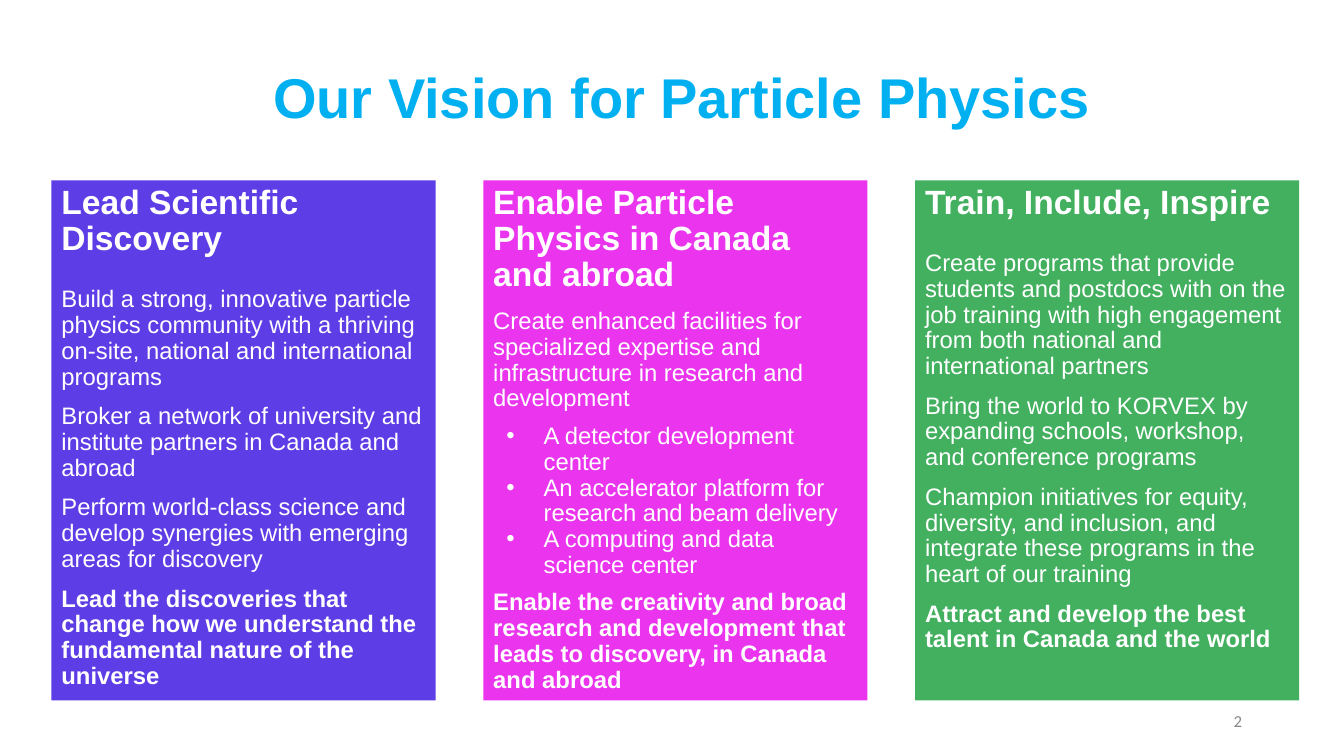
"""Build the vision slide: a title over three coloured cards of goals."""
from dataclasses import dataclass

from lxml import etree
from pptx import Presentation
from pptx.dml.color import RGBColor
from pptx.enum.shapes import MSO_SHAPE
from pptx.enum.text import MSO_ANCHOR, MSO_AUTO_SIZE, PP_ALIGN
from pptx.oxml.ns import qn
from pptx.shapes.autoshape import Shape
from pptx.slide import Slide
from pptx.text.text import TextFrame, _Paragraph
from pptx.util import Emu, Inches, Pt

RECT = MSO_SHAPE.RECTANGLE
TOP, MID = MSO_ANCHOR.TOP, MSO_ANCHOR.MIDDLE
LEFT, CENTER, RIGHT = PP_ALIGN.LEFT, PP_ALIGN.CENTER, PP_ALIGN.RIGHT
FIXED = MSO_AUTO_SIZE.NONE
WIDE, HIGH = Inches(13.33), Inches(7.5)


@dataclass(frozen=True)
class Theme:
    font: str = "Arial"
    small: str = "Calibri"
    sky: str = "00B0F0"
    white: str = "FFFFFF"
    gray: str = "888888"
    blue: str = "5D3DE5"
    pink: str = "EA34EE"
    green: str = "42B05F"
    title: float = 40
    head: float = 24
    body: float = 17
    page: float = 12
    lead: float = 0.9


@dataclass(frozen=True)
class Box:
    """Place on the slide, in percent of its width and height."""
    left: float
    top: float
    width: float
    height: float

    def spot(self) -> tuple[Emu, Emu, Emu, Emu]:
        return (Emu(int(WIDE * self.left / 100)), Emu(int(HIGH * self.top / 100)),
                Emu(int(WIDE * self.width / 100)), Emu(int(HIGH * self.height / 100)))


@dataclass(frozen=True)
class Line:
    text: str
    gap: float = 10
    bold: bool = False
    dot: bool = False


@dataclass(frozen=True)
class Card:
    fill: str
    head: str
    lines: tuple[Line, ...]


THEME = Theme()
TITLE = Box(6.15, 5.33, 89.12, 16)
FIRST = Box(3.83, 23.87, 28.58, 68.8)
PITCH = 32.13
PAGE = Box(70.67, 92.67, 22.5, 5.33)

CARDS = (
    Card(THEME.blue, "Lead Scientific Discovery", (
        Line("Build a strong, innovative particle physics community with a thriving "
             "on-site, national and international programs", 21),
        Line("Broker a network of university and institute partners in Canada and abroad"),
        Line("Perform world-class science and develop synergies with emerging areas "
             "for discovery"),
        Line("Lead the discoveries that change how we understand the fundamental nature "
             "of the universe", bold=True))),
    Card(THEME.pink, "Enable Particle Physics in Canada and abroad", (
        Line("Create enhanced facilities for specialized expertise and infrastructure "
             "in research and development", 10.7),
        Line("A detector development center", 8.6, dot=True),
        Line("An accelerator platform for research and beam delivery", 0, dot=True),
        Line("A computing and data science center", 0, dot=True),
        Line("Enable the creativity and broad research and development that leads to "
             "discovery, in Canada and abroad", 8.6, bold=True))),
    Card(THEME.green, "Train, Include, Inspire", (
        Line("Create programs that provide students and postdocs with on the job training "
             "with high engagement from both national and international partners", 21),
        Line("Bring the world to KORVEX by expanding schools, workshop, and conference "
             "programs"),
        Line("Champion initiatives for equity, diversity, and inclusion, and integrate "
             "these programs in the heart of our training"),
        Line("Attract and develop the best talent in Canada and the world", bold=True))),
)


def frame(shape: Shape, anchor: MSO_ANCHOR) -> TextFrame:
    text = shape.text_frame
    text.word_wrap, text.auto_size, text.vertical_anchor = True, FIXED, anchor
    text.margin_left = text.margin_right = Inches(0.1)
    text.margin_top = text.margin_bottom = Inches(0.05)
    return text


def style(para: _Paragraph, size: float, color: str, bold: bool = False,
          align: PP_ALIGN = LEFT, font: str = THEME.font, gap: float = 0) -> None:
    para.alignment = align
    para.line_spacing, para.space_before = THEME.lead, Pt(gap)
    for run in para.runs:
        run.font.size, run.font.name, run.font.bold = Pt(size), font, bold
        run.font.color.rgb = RGBColor.from_string(color)


def bullet(para: _Paragraph) -> None:
    props = para._p.get_or_add_pPr()
    props.set("marL", str(Inches(0.5)))
    props.set("indent", str(Inches(-0.37)))
    tint = etree.SubElement(props, qn("a:buClr"))
    etree.SubElement(tint, qn("a:srgbClr"), val=THEME.white)
    etree.SubElement(props, qn("a:buFont"), typeface=THEME.font)
    etree.SubElement(props, qn("a:buChar"), char="•")


def draw_title(slide: Slide) -> None:
    shape = slide.shapes.title
    shape.left, shape.top, shape.width, shape.height = TITLE.spot()
    text = frame(shape, MID)
    text.text = "Our Vision for Particle Physics"
    style(text.paragraphs[0], THEME.title, THEME.sky, True, CENTER)


def draw_card(slide: Slide, card: Card, col: int) -> None:
    box = Box(FIRST.left + col * PITCH, FIRST.top, FIRST.width, FIRST.height)
    shape = slide.shapes.add_shape(RECT, *box.spot())
    shape.shadow.inherit = False
    shape.fill.solid()
    shape.fill.fore_color.rgb = RGBColor.from_string(card.fill)
    shape.line.fill.background()
    text = frame(shape, TOP)
    text.text = card.head
    style(text.paragraphs[0], THEME.head, THEME.white, True)
    for line in card.lines:
        para = text.add_paragraph()
        para.text = line.text
        style(para, THEME.body, THEME.white, line.bold, gap=line.gap)
        if line.dot:
            bullet(para)


def draw_page(slide: Slide) -> None:
    text = frame(slide.shapes.add_textbox(*PAGE.spot()), MID)
    text.text = "2"
    para = text.paragraphs[0]
    style(para, THEME.page, THEME.gray, align=RIGHT, font=THEME.small)
    para.line_spacing = 1.0


def main() -> None:
    deck = Presentation()
    deck.slide_width, deck.slide_height = WIDE, HIGH
    slide = deck.slides.add_slide(deck.slide_layouts[5])
    draw_title(slide)
    for col, card in enumerate(CARDS):
        draw_card(slide, card, col)
    draw_page(slide)
    deck.save("out.pptx")


if __name__ == "__main__":
    main()
